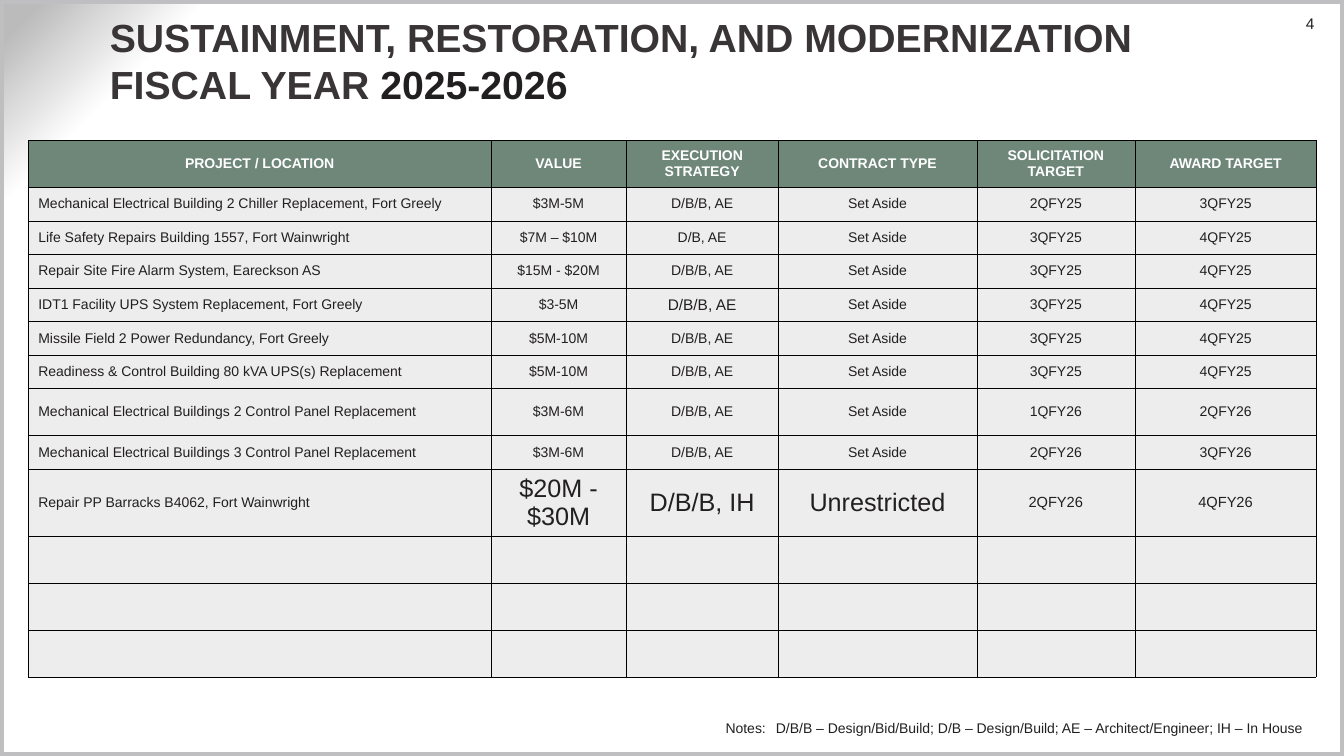
"""Build the sustainment, restoration and modernization project slide."""
from dataclasses import dataclass

from pptx import Presentation
from pptx.dml.color import RGBColor
from pptx.enum.shapes import MSO_SHAPE
from pptx.enum.text import MSO_ANCHOR, PP_ALIGN
from pptx.oxml import parse_xml
from pptx.oxml.ns import nsdecls
from pptx.slide import Slide
from pptx.table import _Cell
from pptx.text.text import _Paragraph
from pptx.util import Pt

FONT = "Arial"
INK = "221F20"
TITLE_INK = "393436"
WHITE = "FFFFFF"
HEADER_FILL = "6E8778"
BODY_FILL = "EDEDED"
FRAME = "BFBFC2"
BORDER = "000000"

COLUMN_WIDTHS = (330.5, 96.5, 108.7, 141.8, 113, 129.6)
SHORT_ROW, TALL_ROW = 24, 33.6
TALL_ROWS = {0, 7, 10, 11, 12}
EMPTY_ROWS = 3
SPECIAL_SIZES = {(4, 2): 11, (9, 1): 18, (9, 2): 18, (9, 3): 18, (9, 4): 10.5, (9, 5): 10.5}
NOTE_TABS = (18, 36, 54, 72, 108, 144, 162, 180)

HEADINGS = ("PROJECT / LOCATION", "VALUE", "EXECUTION STRATEGY",
            "CONTRACT TYPE", "SOLICITATION TARGET", "AWARD TARGET")


@dataclass(frozen=True)
class Project:
    name: str
    value: str
    solicitation: str
    award: str
    strategy: str = "D/B/B, AE"
    contract: str = "Set Aside"

    def cells(self) -> tuple[str, ...]:
        return (self.name, self.value, self.strategy, self.contract,
                self.solicitation, self.award)


@dataclass(frozen=True)
class Span:
    text: str
    size: float
    color: str = INK
    bold: bool = False


@dataclass(frozen=True)
class Label:
    left: float
    top: float
    width: float
    height: float
    lines: tuple[tuple[Span, ...], ...]
    margins: tuple[float, float, float, float]
    anchor: MSO_ANCHOR = MSO_ANCHOR.TOP
    align: PP_ALIGN = PP_ALIGN.LEFT
    tabs: tuple[float, ...] = ()


PROJECTS = (
    Project("Mechanical Electrical Building 2 Chiller Replacement, Fort Greely",
            "$3M-5M", "2QFY25", "3QFY25"),
    Project("Life Safety Repairs Building 1557, Fort Wainwright",
            "$7M – $10M", "3QFY25", "4QFY25", "D/B, AE"),
    Project("Repair Site Fire Alarm System, Eareckson AS",
            "$15M - $20M", "3QFY25", "4QFY25"),
    Project("IDT1 Facility UPS System Replacement, Fort Greely",
            "$3-5M", "3QFY25", "4QFY25"),
    Project("Missile Field 2 Power Redundancy, Fort Greely",
            "$5M-10M", "3QFY25", "4QFY25"),
    Project("Readiness & Control Building 80 kVA UPS(s) Replacement",
            "$5M-10M", "3QFY25", "4QFY25"),
    Project("Mechanical Electrical Buildings 2 Control Panel Replacement",
            "$3M-6M", "1QFY26", "2QFY26"),
    Project("Mechanical Electrical Buildings 3 Control Panel Replacement",
            "$3M-6M", "2QFY26", "3QFY26"),
    Project("Repair PP Barracks B4062, Fort Wainwright",
            "$20M - $30M", "2QFY26", "4QFY26", "D/B/B, IH", "Unrestricted"),
)

LABELS = (
    Label(895.7, 10.1, 43.2, 13.7, ((Span("4", 11),),), (7.2, 0, 0, 0),
          align=PP_ALIGN.RIGHT),
    Label(74.9, 10.1, 817.9, 65.5,
          ((Span("SUSTAINMENT, RESTORATION, AND MODERNIZATION", 28, TITLE_INK, True),),
           (Span("FISCAL YEAR ", 28, TITLE_INK, True), Span("2025-2026", 28, INK, True))),
          (3.6, 0, 3.6, 0), MSO_ANCHOR.MIDDLE),
    Label(511.2, 510.5, 427, 19.4,
          ((Span("Notes: \tD/B/B – Design/Bid/Build; D/B – Design/Build; "
                 "AE – Architect/Engineer; IH – In House", 10),),),
          (7.2, 3.6, 7.2, 3.6), tabs=NOTE_TABS),
)


def color_of(value: str) -> RGBColor:
    return RGBColor.from_string(value)


def add_span(para: _Paragraph, span: Span) -> None:
    run = para.add_run()
    run.text = span.text
    formats = {"name": FONT, "size": Pt(span.size), "bold": span.bold}
    for attribute, value in formats.items():
        setattr(run.font, attribute, value)
    run.font.color.rgb = color_of(span.color)


def add_label(page: Slide, label: Label) -> None:
    box = page.shapes.add_textbox(*map(Pt, (label.left, label.top, label.width, label.height)))
    frame = box.text_frame
    left, top, right, bottom = map(Pt, label.margins)
    formats = {"word_wrap": True, "vertical_anchor": label.anchor, "margin_left": left,
               "margin_top": top, "margin_right": right, "margin_bottom": bottom}
    for attribute, value in formats.items():
        setattr(frame, attribute, value)
    para = frame.paragraphs[0]
    if label.tabs:
        stops = "".join(f'<a:tab pos="{Pt(stop)}" algn="l"/>' for stop in label.tabs)
        para._p.get_or_add_pPr().append(
            parse_xml(f'<a:tabLst {nsdecls("a")}>{stops}</a:tabLst>'))
    para.alignment = label.align
    for index, line in enumerate(label.lines):
        if index:
            para.add_line_break()
        for span in line:
            add_span(para, span)


def style_cell(cell: _Cell, fill: str) -> None:
    properties = cell._tc.get_or_add_tcPr()
    for side in "LRTB":
        properties.append(parse_xml(
            f'<a:ln{side} {nsdecls("a")} w="{Pt(0.25)}"><a:solidFill>'
            f'<a:srgbClr val="{BORDER}"/></a:solidFill></a:ln{side}>'))
    cell.fill.solid()
    cell.fill.fore_color.rgb = color_of(fill)
    cell.vertical_anchor = MSO_ANCHOR.MIDDLE


def add_project_table(page: Slide) -> None:
    rows = [HEADINGS, *(project.cells() for project in PROJECTS),
            *[("",) * len(HEADINGS)] * EMPTY_ROWS]
    heights = [TALL_ROW if index in TALL_ROWS else SHORT_ROW for index in range(len(rows))]
    table = page.shapes.add_table(len(rows), len(HEADINGS), Pt(20.2), Pt(100.1),
                                  Pt(sum(COLUMN_WIDTHS)), Pt(sum(heights))).table
    table.first_row = table.horz_banding = False
    for column, width in zip(table.columns, COLUMN_WIDTHS):
        column.width = Pt(width)
    for row_index, (texts, height) in enumerate(zip(rows, heights)):
        table.rows[row_index].height = Pt(height)
        header = row_index == 0
        for column_index, text in enumerate(texts):
            cell = table.cell(row_index, column_index)
            style_cell(cell, HEADER_FILL if header else BODY_FILL)
            if not text:
                continue
            para = cell.text_frame.paragraphs[0]
            para.alignment = PP_ALIGN.CENTER if header or column_index else PP_ALIGN.LEFT
            size = SPECIAL_SIZES.get((row_index, column_index), 10)
            add_span(para, Span(text, size, WHITE if header else INK, header))


def set_background(page: Slide) -> None:
    stops = "".join(f'<a:gs pos="{percent * 1000}"><a:srgbClr val="{color}"/></a:gs>'
                    for percent, color in ((87, WHITE), (90, WHITE), (98, "BBBBBC")))
    page.element.cSld.insert(0, parse_xml(
        f'<p:bg {nsdecls("p", "a")}><p:bgPr><a:gradFill><a:gsLst>{stops}</a:gsLst>'
        '<a:path path="circle"><a:fillToRect l="100000" t="100000"/></a:path>'
        '</a:gradFill><a:effectLst/></p:bgPr></p:bg>'))


def add_frame(page: Slide, width: int, height: int) -> None:
    border = page.shapes.add_shape(MSO_SHAPE.RECTANGLE, Pt(0), Pt(0), width, height)
    border.shadow.inherit = False
    border.fill.background()
    border.line.color.rgb = color_of(FRAME)
    border.line.width = Pt(6)


def main() -> None:
    deck = Presentation()
    deck.slide_width, deck.slide_height = Pt(960), Pt(540)
    page = deck.slides.add_slide(deck.slide_layouts[6])
    set_background(page)
    add_frame(page, deck.slide_width, deck.slide_height)
    add_project_table(page)
    for label in LABELS:
        add_label(page, label)
    deck.save("out.pptx")


if __name__ == "__main__":
    main()
